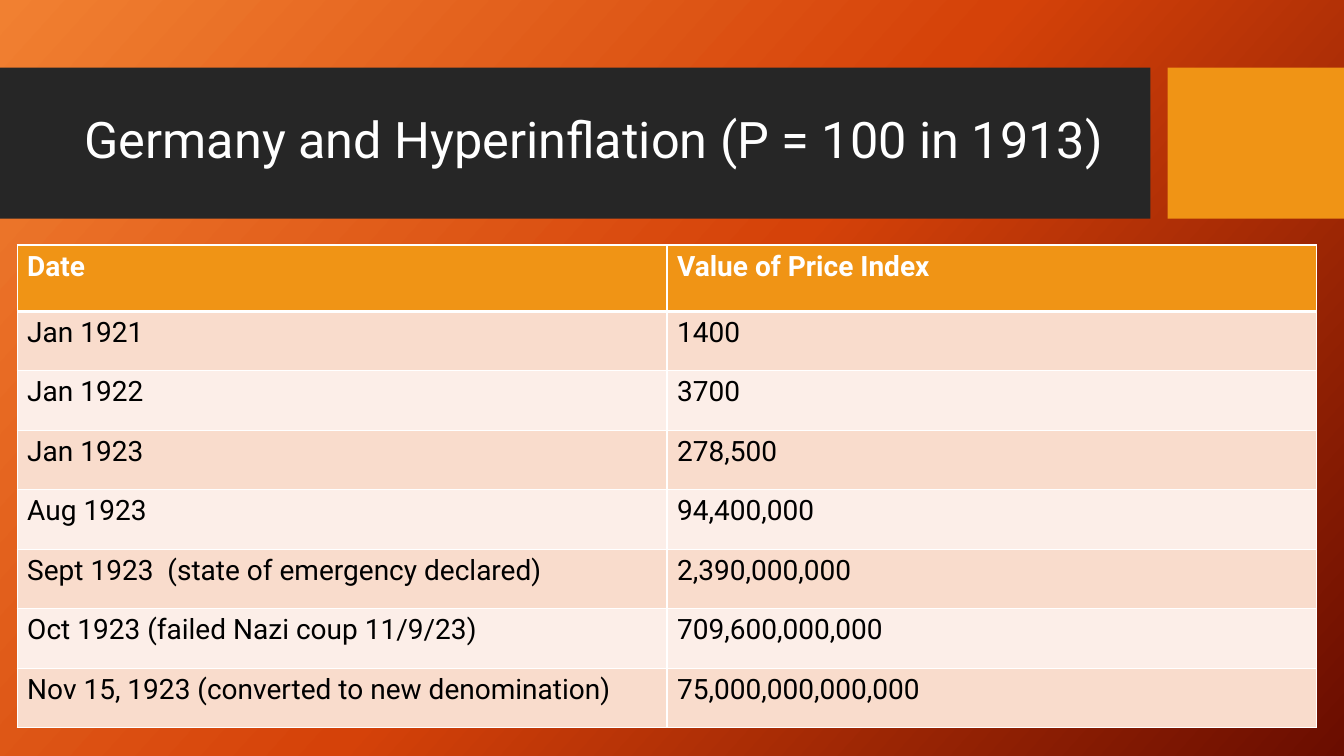
from copy import deepcopy

from pptx import Presentation
from pptx import util as u
from pptx.dml.color import RGBColor
from pptx.enum import shapes, text
from pptx.oxml import ns, xmlchemy

COLORS = {
    "white": "FFFFFF", "black": "000000", "dark": "262626", "amber": "F09415",
    "peach": "F9DCCC", "cream": "FCEEE8",
    "start": "F18031", "middle": "D54209", "end": "6A0D00",
}
FONT = "Roboto"
ROWS = [
    ("Date", "Value of Price Index"),
    ("Jan 1921", "1400"),
    ("Jan 1922", "3700"),
    ("Jan 1923", "278,500"),
    ("Aug 1923", "94,400,000"),
    ("Sept 1923  (state of emergency declared)", "2,390,000,000"),
    ("Oct 1923 (failed Nazi coup 11/9/23)", "709,600,000,000"),
    ("Nov 15, 1923 (converted to new denomination)", "75,000,000,000,000"),
]


def rgb(name):
    return RGBColor.from_string(COLORS[name])


def box(*lengths):
    return [u.Inches(n) for n in lengths]


class Deck:
    """Holds the slide and its shared style."""

    def __init__(self, slide, font):
        self.slide = slide
        self.font = font

    def backdrop(self, names, angle):
        """Fill the background with evenly spaced colours, angle clockwise."""
        fill = self.slide.background.fill
        fill.gradient()
        fill.gradient_angle = 360 - angle
        stops = next(self.slide.element.iter(ns.qn("a:gsLst")))
        while len(stops) < len(names):
            stops.append(deepcopy(stops[-1]))
        for i, (stop, name) in enumerate(zip(fill.gradient_stops, names)):
            stop.position = i / (len(names) - 1)
            stop.color.rgb = rgb(name)

    def band(self, left, top, width, height, color):
        shape = self.slide.shapes.add_shape(
            shapes.MSO_SHAPE.RECTANGLE, *box(left, top, width, height))
        shape.shadow.inherit = False
        shape.fill.solid()
        shape.fill.fore_color.rgb = rgb(color)
        shape.line.fill.background()

    def style(self, para, size, color, bold=False):
        for run in para.runs:
            run.font.name = self.font
            run.font.size = u.Pt(size)
            run.font.bold = bold
            run.font.color.rgb = rgb(color)

    def title(self, words, left, top, width, height):
        frame = self.slide.shapes.add_textbox(
            *box(left, top, width, height)).text_frame
        frame.word_wrap = True
        frame.vertical_anchor = text.MSO_ANCHOR.MIDDLE
        frame.text = words
        para = frame.paragraphs[0]
        para.line_spacing = 0.9
        self.style(para, 36, "white")

    def border(self, cell, side, width):
        props = cell._tc.get_or_add_tcPr()
        line = xmlchemy.OxmlElement(f"a:ln{side}")
        line.set("w", str(u.Pt(width)))
        fill = xmlchemy.OxmlElement("a:solidFill")
        color = xmlchemy.OxmlElement("a:srgbClr")
        color.set("val", COLORS["white"])
        fill.append(color)
        line.append(fill)
        props.append(line)

    def table(self, rows, left, top, width, head, body):
        """Draw a header row of height head, then striped rows of height body."""
        height = head + body * (len(rows) - 1)
        grid = self.slide.shapes.add_table(
            len(rows), len(rows[0]), *box(left, top, width, height)).table
        for r, row in enumerate(rows):
            grid.rows[r].height = u.Inches(body if r else head)
            for c, words in enumerate(row):
                cell = grid.cell(r, c)
                for side in "LRTB":
                    thick = (r, side) in ((0, "B"), (1, "T"))
                    self.border(cell, side, 3 if thick else 1)
                cell.fill.solid()
                stripe = "peach" if r % 2 else "cream"
                cell.fill.fore_color.rgb = rgb(stripe if r else "amber")
                cell.text_frame.text = words
                self.style(cell.text_frame.paragraphs[0], 20,
                           "black" if r else "white", r == 0)


def main():
    prs = Presentation()
    prs.slide_width, prs.slide_height = box(13.33, 7.5)
    deck = Deck(prs.slides.add_slide(prs.slide_layouts[6]), FONT)
    deck.backdrop(["start", "middle", "end"], 42)
    deck.band(0, 0.67, 11.41, 1.5, "dark")
    deck.band(11.58, 0.67, 1.75, 1.5, "amber")
    deck.title("Germany and Hyperinflation (P = 100 in 1913)",
               0.74, 0.82, 10.51, 1.18)
    deck.table(ROWS, 0.17, 2.43, 12.89, 0.66, 0.59)
    prs.save("out.pptx")


if __name__ == "__main__":
    main()
